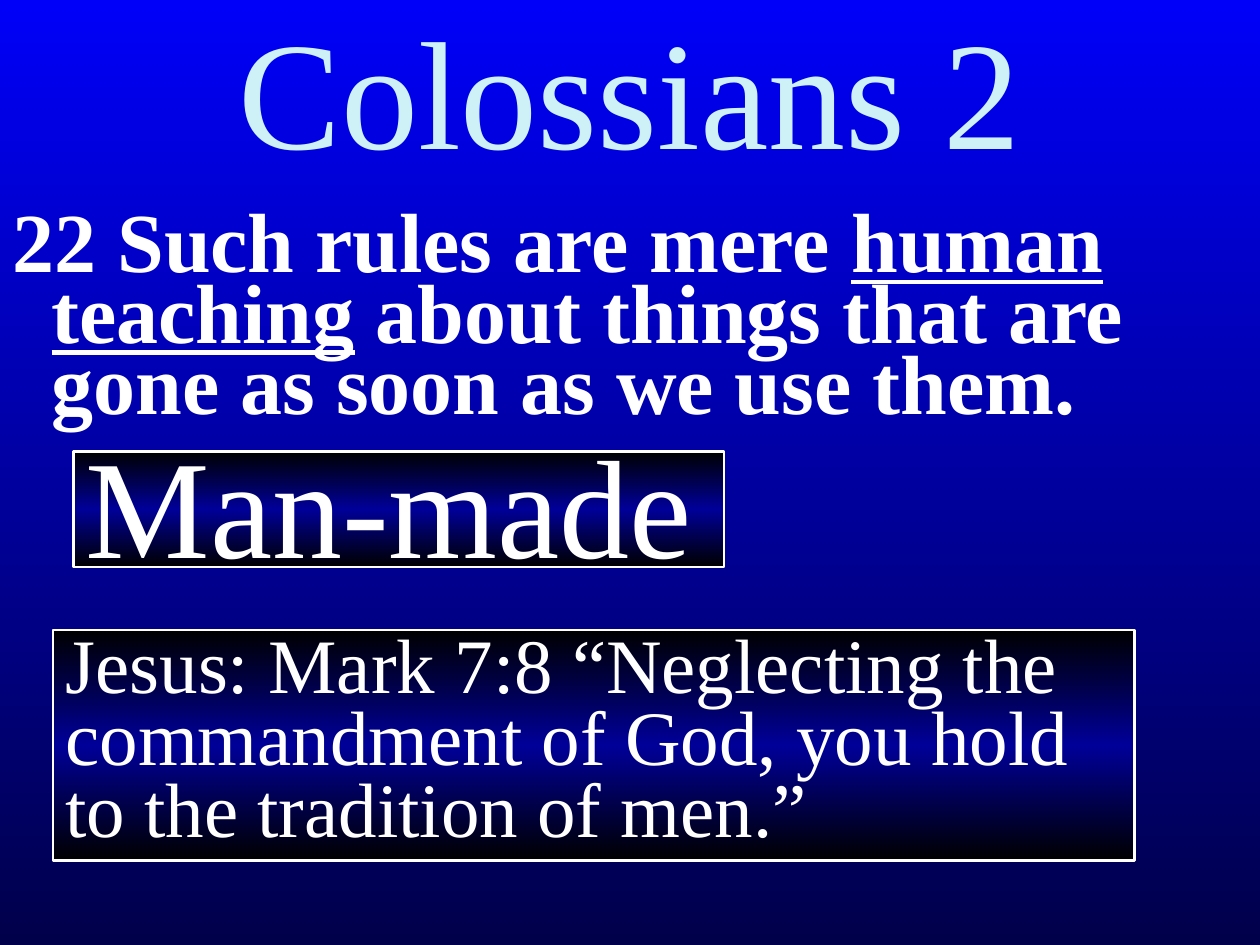
from copy import deepcopy
from dataclasses import dataclass

from pptx import Presentation, util as u
from pptx.dml.color import RGBColor
from pptx.enum import shapes, text
from pptx.oxml.ns import qn

FONT = "Times New Roman"
WHITE = "FFFFFF"
PALE_BLUE = "CEF1F8"
BACKGROUND = ["0000F8", "00004A"]
BOX_GRADIENT = ["000000", "000098", "000000"]


@dataclass
class Callout:
    """A framed box with its place in centimetres."""
    words: str
    left: float
    top: float
    width: float
    height: float
    size: float
    line_spacing: float


CALLOUTS = [
    Callout("Jesus: Mark 7:8 “Neglecting the commandment of God, "
            "you hold to the tradition of men.”",
            1.07, 12.7, 21.8, 4.65, size=44, line_spacing=0.78),
    Callout("Man-made", 1.48, 9.1, 13.12, 2.33, size=80, line_spacing=0.75),
]


def color(value: str) -> RGBColor:
    return RGBColor.from_string(value)


def fill_gradient(fill, element, colors: list[str]) -> None:
    """Fill from top to bottom with evenly spaced colours."""
    fill.gradient()
    fill.gradient_angle = 270
    stop_list = element.find(".//" + qn("a:gsLst"))
    for _ in colors[2:]:
        stop_list.append(deepcopy(stop_list[0]))
    for index, (stop, value) in enumerate(zip(fill.gradient_stops, colors)):
        stop.color.rgb = color(value)
        stop.position = index / (len(colors) - 1)


def write_text(shape, *runs: tuple[str, bool], size: float, fill: str = WHITE,
               bold: bool = False, align=text.PP_ALIGN.LEFT,
               anchor=text.MSO_ANCHOR.TOP, line_spacing: float = 1,
               space_before: float = 0, hanging: float = 0) -> None:
    """Write one paragraph of (words, underlined) runs."""
    frame = shape.text_frame
    frame.word_wrap = True
    frame.vertical_anchor = anchor
    paragraph = frame.paragraphs[0]
    paragraph.alignment = align
    paragraph.line_spacing = line_spacing
    paragraph.space_before = u.Pt(space_before)
    if hanging:
        properties = paragraph._p.get_or_add_pPr()
        properties.set("marL", str(u.Cm(hanging)))
        properties.set("indent", str(-u.Cm(hanging)))
    for words, underlined in runs:
        run = paragraph.add_run()
        run.text = words
        run.font.name = FONT
        run.font.size = u.Pt(size)
        run.font.bold = bold
        run.font.underline = underlined
        run.font.color.rgb = color(fill)


def add_callout(slide, callout: Callout) -> None:
    shape = slide.shapes.add_shape(
        shapes.MSO_SHAPE.RECTANGLE, u.Cm(callout.left), u.Cm(callout.top),
        u.Cm(callout.width), u.Cm(callout.height))
    shape.shadow.inherit = False
    fill_gradient(shape.fill, shape._element, BOX_GRADIENT)
    shape.line.color.rgb = color(WHITE)
    shape.line.width = u.Pt(1.5)
    write_text(shape, (callout.words, False), size=callout.size,
               line_spacing=callout.line_spacing,
               space_before=round(callout.size * 0.05, 1))


def main() -> None:
    presentation = Presentation()
    presentation.slide_width = u.Cm(25.4)
    presentation.slide_height = u.Cm(19.05)
    slide = presentation.slides.add_slide(presentation.slide_layouts[6])
    width = presentation.slide_width
    title_height = u.Cm(4.24)

    # Background
    fill_gradient(slide.background.fill, slide._element, BACKGROUND)

    # Verse
    verse = slide.shapes.add_textbox(0, title_height, width, u.Cm(13.54))
    write_text(verse, ("22 Such rules are mere ", False),
               ("human teaching", True),
               (" about things that are gone as soon as we use them.", False),
               size=48, bold=True, line_spacing=0.7, space_before=7.2,
               hanging=0.79)

    # Title
    title = slide.shapes.add_textbox(0, 0, width, title_height)
    write_text(title, ("Colossians 2", False), size=88, fill=PALE_BLUE,
               align=text.PP_ALIGN.CENTER, anchor=text.MSO_ANCHOR.MIDDLE,
               line_spacing=0.8)

    # Callouts
    for callout in CALLOUTS:
        add_callout(slide, callout)

    presentation.save("out.pptx")


if __name__ == "__main__":
    main()
